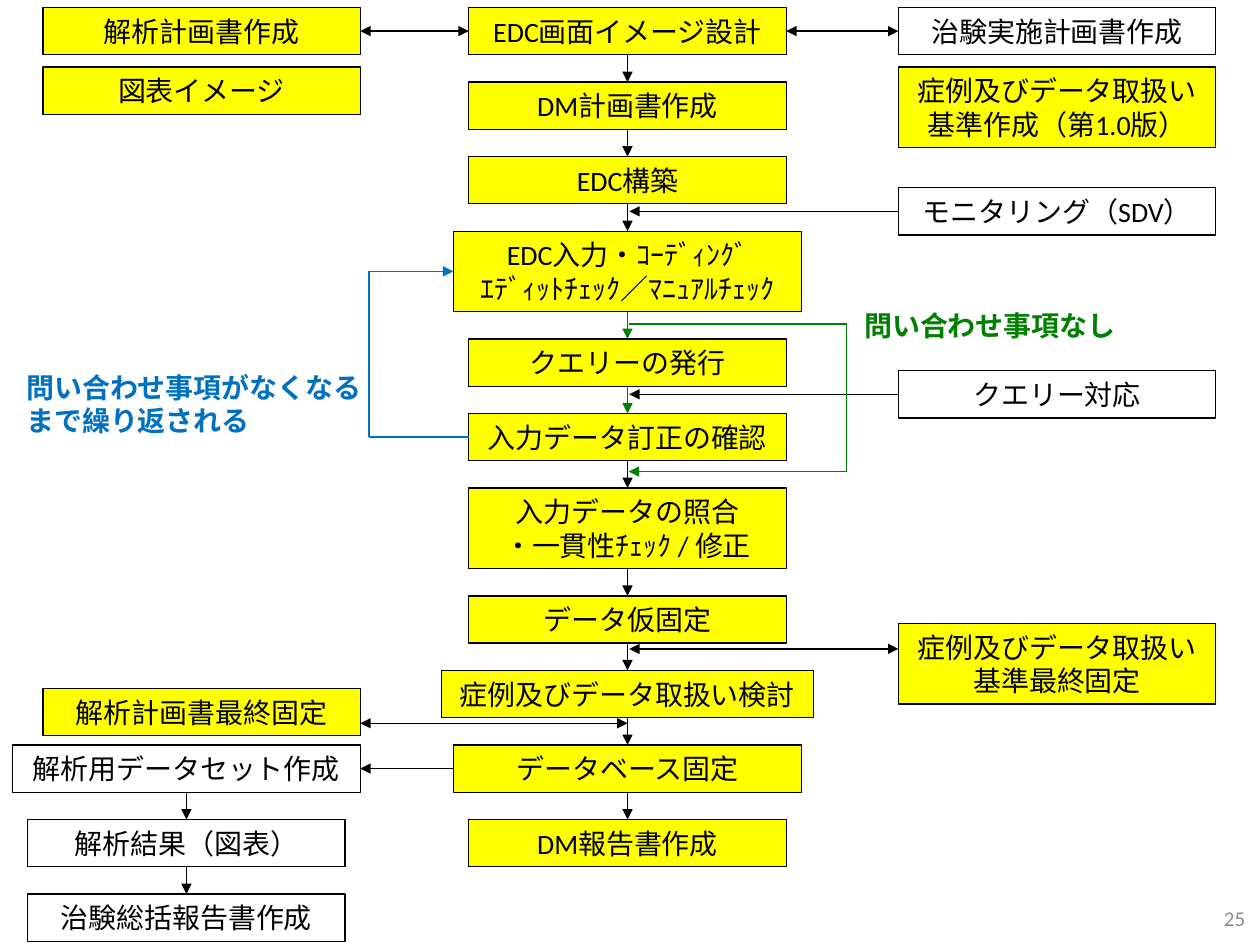
import collections
import dataclasses

import pptx
import pptx.dml.color
import pptx.enum.shapes
import pptx.enum.text
import pptx.oxml
import pptx.oxml.ns
import pptx.util

Pt = pptx.util.Pt
Align = pptx.enum.text.PP_ALIGN
Anchor = pptx.enum.text.MSO_ANCHOR
Area = collections.namedtuple("Area", "x y w h")
TOP, LEFT, BOTTOM, RIGHT = range(4)


@dataclasses.dataclass(frozen=True)
class Theme:
    font: str = "Calibri"
    black: str = "000000"
    yellow: str = "FFFF00"
    green: str = "008000"
    blue: str = "0070C0"
    gray: str = "8C8C8C"
    body: float = 16
    small: float = 12
    thin: float = 0.75
    thick: float = 1
    wide: float = 181.4
    low: float = 27
    tall: float = 46
    gap: float = 15.6


THEME = Theme()


def paint(text):
    return pptx.dml.color.RGBColor.from_string(text)


def write(shape, lines, color=THEME.black, size=THEME.body, bold=False,
          align=Align.CENTER, anchor=Anchor.MIDDLE):
    frame = shape.text_frame
    frame.word_wrap = True
    frame.vertical_anchor = anchor
    for index, line in enumerate(lines):
        para = frame.paragraphs[0] if index == 0 else frame.add_paragraph()
        para.alignment = align
        run = para.add_run()
        run.text = line
        run.font.name = THEME.font
        run.font.size = Pt(size)
        run.font.bold = bold
        run.font.color.rgb = paint(color)


def block(slide, area, lines, fill=THEME.yellow):
    kind = pptx.enum.shapes.MSO_SHAPE.RECTANGLE
    shape = slide.shapes.add_shape(kind, *map(Pt, area))
    shape.shadow.inherit = False
    if fill:
        shape.fill.solid()
        shape.fill.fore_color.rgb = paint(fill)
    else:
        shape.fill.background()
    shape.line.color.rgb = paint(THEME.black)
    shape.line.width = Pt(THEME.thin)
    write(shape, lines)
    return shape


def label(slide, area, text, **style):
    write(slide.shapes.add_textbox(*map(Pt, area)), [text], **style)


def link(slide, start, end, color=THEME.black, head=False, tail=True):
    kind = pptx.enum.shapes.MSO_CONNECTOR.STRAIGHT
    line = slide.shapes.add_connector(kind, 0, 0, 0, 0)
    if hasattr(start[0], "shape_id"):
        line.begin_connect(*start)
    else:
        line.begin_x, line.begin_y = map(Pt, start)
    if hasattr(end[0], "shape_id"):
        line.end_connect(*end)
    else:
        line.end_x, line.end_y = map(Pt, end)
    line.line.color.rgb = paint(color)
    line.line.width = Pt(THEME.thin if color == THEME.black else THEME.thick)
    pen = line.line._get_or_add_ln()
    for name, shown in (("a:headEnd", head), ("a:tailEnd", tail)):
        if shown:
            tip = pptx.oxml.ns.qn(name)
            pen.append(pen.makeelement(tip, {"type": "triangle"}))
    props = line._element.spPr
    props.append(props.makeelement(pptx.oxml.ns.qn("a:effectLst"), {}))


def stack(slide, area, steps, fill=THEME.yellow):
    shapes = []
    top = area.y
    for lines, width, color in steps:
        high = THEME.tall if len(lines) > 1 else THEME.low
        left = area.x + (area.w - width) / 2
        shape = block(slide, Area(left, top, width, high), lines, fill)
        if shapes:
            link(slide, (shapes[-1], BOTTOM), (shape, TOP), color)
        shapes.append(shape)
        top += high + THEME.gap
    return shapes


def main_flow(slide, area):
    wide, black, green = THEME.wide, THEME.black, THEME.green
    return stack(slide, area, [
        (["EDC画面イメージ設計"], wide, black),
        (["DM計画書作成"], wide, black),
        (["EDC構築"], wide, black),
        (["EDC入力・ｺｰﾃﾞｨﾝｸﾞ", "ｴﾃﾞｨｯﾄﾁｪｯｸ／ﾏﾆｭｱﾙﾁｪｯｸ"], 199, black),
        (["クエリーの発行"], wide, green),
        (["入力データ訂正の確認"], wide, green),
        (["入力データの照合", "・一貫性ﾁｪｯｸ / 修正"], wide, black),
        (["データ仮固定"], wide, black),
        (["症例及びデータ取扱い検討"], 213, black),
        (["データベース固定"], 199, black),
        (["DM報告書作成"], wide, black),
    ])


def plans(slide, area, axis, design):
    items = [("解析計画書作成", 0), ("図表イメージ", 34),
             ("解析計画書最終固定", 389)]
    first, _, last = [
        block(slide, Area(area.x, area.y + drop, area.w, THEME.low), [text])
        for text, drop in items]
    link(slide, (first, RIGHT), (design, LEFT), head=True)
    level = area.y + 409
    link(slide, (axis, level), (area.x + area.w, level), head=True)


def reports(slide, area, base):
    data = stack(slide, area, [
        (["解析用データセット作成"], area.w, THEME.black),
        (["解析結果（図表）"], THEME.wide, THEME.black),
        (["治験総括報告書作成"], THEME.wide, THEME.black),
    ], None)[0]
    link(slide, (base, LEFT), (data, RIGHT))


def inputs(slide, area, axis, design):
    low, tall, yellow = THEME.low, THEME.tall, THEME.yellow
    items = [
        ("治験実施計画書作成", 0, low, None),
        ("症例及びデータ取扱い基準作成（第1.0版）", 34, tall, yellow),
        ("モニタリング（SDV）", 103, low, None),
        ("クエリー対応", 207.5, low, None),
        ("症例及びデータ取扱い基準最終固定", 352, tall, yellow),
    ]
    trial, _, monitor, reply, _ = [
        block(slide, Area(area.x, area.y + drop, area.w, high), [text], fill)
        for text, drop, high, fill in items]
    link(slide, (trial, LEFT), (design, RIGHT), head=True)
    for shape in (monitor, reply):
        mid = (shape.top + shape.height / 2) / Pt(1)
        link(slide, (shape, LEFT), (axis + 1, mid))
    level = area.y + 366.5
    link(slide, (area.x, level), (axis + 1, level), head=True)


def repeat(slide, area, entry, check):
    side = area.x + area.w
    low = (check.top + check.height / 2) / Pt(1)
    high = (entry.top + entry.height / 2) / Pt(1)
    link(slide, (check, LEFT), (side, low), THEME.blue, tail=False)
    link(slide, (side, low), (side, high), THEME.blue, tail=False)
    link(slide, (side, high), (entry, LEFT), THEME.blue)
    label(slide, Area(area.x, area.y, 207.4, area.h),
          "問い合わせ事項がなくなるまで繰り返される",
          color=THEME.blue, bold=True, align=Align.LEFT, anchor=Anchor.TOP)


def bypass(slide, area):
    x, y, w, h = area
    spots = [(x, y), (x + w, y), (x + w, y + h), (x, y + h)]
    for index, pair in enumerate(zip(spots, spots[1:])):
        link(slide, *pair, THEME.green, tail=index == 2)
    label(slide, Area(x + w + 3, y - 12.5, 158.4, THEME.low),
          "問い合わせ事項なし",
          color=THEME.green, bold=True, align=Align.LEFT, anchor=Anchor.TOP)


def number(slide, area):
    label(slide, area, "25", color=THEME.gray, size=THEME.small,
          align=Align.RIGHT)


def main():
    deck = pptx.Presentation()
    deck.slide_width, deck.slide_height = Pt(720), Pt(540)
    slide = deck.slides.add_slide(deck.slide_layouts[6])
    top, axis = 4.3, 358.6
    flow = main_flow(slide, Area(axis - 106.5, top, 213, 491))
    plans(slide, Area(24.5, top, THEME.wide, 416), axis, flow[0])
    base = flow[9]
    reports(slide, Area(7.2, base.top / Pt(1), 198.7, 112), base)
    inputs(slide, Area(513.4, top, THEME.wide, 398), axis, flow[0])
    repeat(slide, Area(8, 208, 203, 46), flow[3], flow[5])
    bypass(slide, Area(axis + 0.7, 185, 124.5, 84.5))
    number(slide, Area(556.6, 510.5, 162, 28.8))
    deck.save("out.pptx")


if __name__ == "__main__":
    main()
